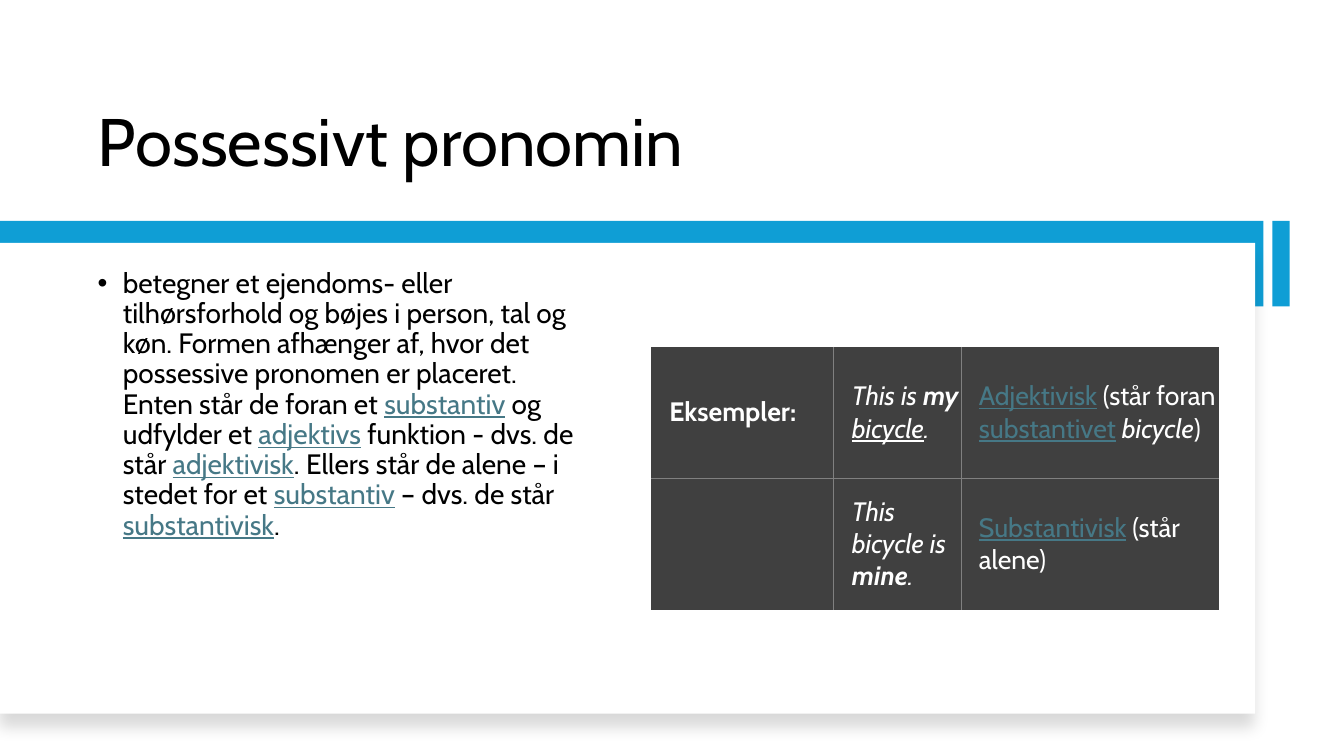
from pptx import Presentation
from pptx.dml.color import RGBColor
from pptx.enum.shapes import MSO_SHAPE
from pptx.enum.text import MSO_ANCHOR as Anchor
from pptx.oxml import parse_xml
from pptx.oxml.ns import nsdecls
from pptx.util import Inches, Pt

BLACK, WHITE, BLUE = "000000", "FFFFFF", "0F9ED5"
DARK, GRAY, TEAL = "404040", "808080", "467886"
LINK = {"color": TEAL, "underline": True}
ITALIC = {"italic": True}
BOLD_ITALIC = {"bold": True, "italic": True}


def rgb(value):
    return RGBColor.from_string(value)


def xml(tag, attrs="", inner=""):
    return parse_xml(f"<a:{tag} {nsdecls('a')} {attrs}>{inner}</a:{tag}>")


class Deck:
    font = "Cabin"

    def __init__(self, width, height):
        self.prs = Presentation()
        self.prs.slide_width, self.prs.slide_height = Inches(width), Inches(height)
        self.s = self.prs.slides.add_slide(self.prs.slide_layouts[6])

    def add_runs(self, p, runs, size, color):
        for text, style in runs:
            r = p.add_run()
            r.text = text
            values = {"name": self.font, "size": Pt(size), "color": color, **style}
            r.font.color.rgb = rgb(values.pop("color"))
            for name, value in values.items():
                setattr(r.font, name, value)

    def text(self, box, runs, size, anchor, bullet=None):
        tf = self.s.shapes.add_textbox(*map(Inches, box)).text_frame
        tf.word_wrap = True
        tf.vertical_anchor = anchor
        p = tf.paragraphs[0]
        p.line_spacing = 0.9
        if bullet:
            pPr = p._p.get_or_add_pPr()
            pPr.set("marL", str(Inches(0.25)))
            pPr.set("indent", str(-Inches(0.25)))
            pPr.append(xml("buFont", 'typeface="Arial"'))
            pPr.append(xml("buChar", f'char="{bullet}"'))
        self.add_runs(p, runs, size, BLACK)

    def rect(self, box, color, rotation=0, shadow=False):
        sp = self.s.shapes.add_shape(MSO_SHAPE.RECTANGLE, *map(Inches, box))
        sp.rotation = rotation
        sp.fill.solid()
        sp.fill.fore_color.rgb = rgb(color)
        sp.line.fill.background()
        sp.shadow.inherit = False
        if shadow:
            effects = sp._element.spPr.find(xml("effectLst").tag)
            effects.append(xml(
                "outerShdw",
                f'blurRad="{Pt(11)}" dist="{Pt(10)}" dir="5400000" algn="t" rotWithShape="0"',
                '<a:srgbClr val="000000"><a:alpha val="15000"/></a:srgbClr>'))

    def borders(self, cell, sides):
        tcPr = cell._tc.get_or_add_tcPr()
        for side, shown in sides.items():
            fill = f'<a:solidFill><a:srgbClr val="{GRAY}"/></a:solidFill>' if shown else "<a:noFill/>"
            tcPr.append(xml("ln" + side, f'w="{Pt(0.5)}"', fill))

    def table(self, box, widths, rows, size):
        last_row, last_col = len(rows) - 1, len(widths) - 1
        frame = self.s.shapes.add_table(len(rows), len(widths), *map(Inches, box))
        table = frame.table
        table.first_row = table.horz_banding = False
        for column, width in zip(table.columns, widths):
            column.width = Inches(width)
        for i, row in enumerate(rows):
            for j, runs in enumerate(row):
                cell = table.cell(i, j)
                self.borders(cell, {"L": j > 0, "R": j < last_col, "T": i > 0, "B": i < last_row})
                cell.fill.solid()
                cell.fill.fore_color.rgb = rgb(DARK)
                cell.vertical_anchor = Anchor.MIDDLE
                cell.margin_left, cell.margin_right = Inches(0.18), 0
                cell.margin_top = cell.margin_bottom = Inches(0.14)
                self.add_runs(cell.text_frame.paragraphs[0], runs, size, WHITE)


def main():
    deck = Deck(13.33, 7.5)
    deck.text((0.87, 0.42, 11.01, 1.42), [("Possessivt pronomin", {})], 48, Anchor.BOTTOM)
    deck.rect((0, 2.19, 12.53, 0.85), BLUE)
    deck.rect((0, 2.41, 12.45, 4.67), WHITE, shadow=True)
    deck.rect((12.28, 2.53, 0.85, 0.17), BLUE, rotation=90)

    definition = [
        ("betegner et ejendoms- eller tilhørsforhold og bøjes i person, tal og køn. "
         "Formen afhænger af, hvor det possessive pronomen er placeret. "
         "Enten står de foran et ", {}),
        ("substantiv", LINK), (" og udfylder et ", {}),
        ("adjektivs", LINK), (" funktion - dvs. de står ", {}),
        ("adjektivisk", LINK), (". Ellers står de alene – i stedet for et ", {}),
        ("substantiv", LINK), (" – dvs. de står ", {}),
        ("substantivisk", LINK), (".", {}),
    ]
    deck.text((0.87, 2.62, 4.96, 4.2), definition, 20, Anchor.TOP, bullet="•")

    examples = [
        [[("Eksempler:", {"bold": True})],
         [("This is ", ITALIC), ("my ", BOLD_ITALIC),
          ("bicycle", {"italic": True, "underline": True}), (".", ITALIC)],
         [("Adjektivisk", LINK), (" (står foran ", {}), ("substantivet", LINK),
          (" ", {}), ("bicycle", ITALIC), (")", {})]],
        [[],
         [("This bicycle is ", ITALIC), ("mine", BOLD_ITALIC), (".", ITALIC)],
         [("Substantivisk", LINK), (" (står alene)", {})]],
    ]
    deck.table((6.46, 3.44, 5.63, 2.61), (1.81, 1.26, 2.56), examples, 19)
    deck.prs.save("out.pptx")


if __name__ == "__main__":
    main()
